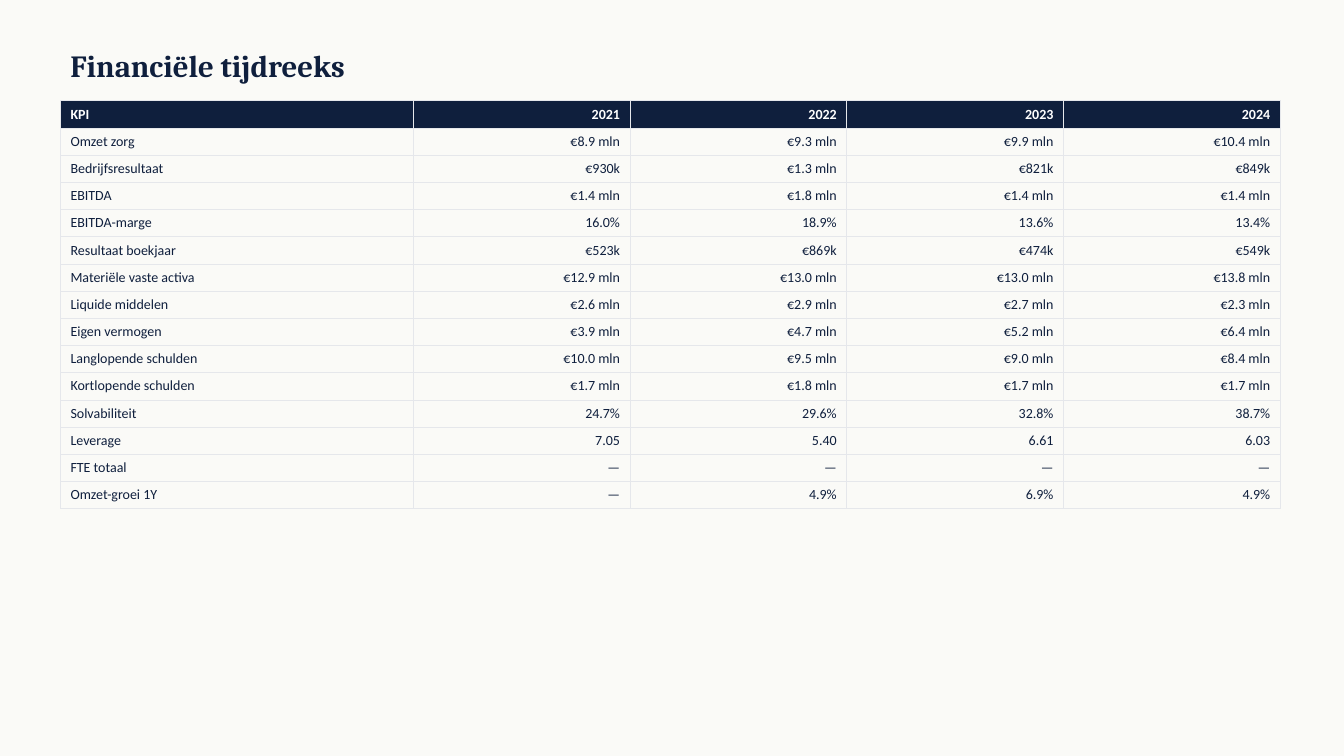
from dataclasses import dataclass

from lxml import etree
from pptx import Presentation
from pptx.dml.color import RGBColor
from pptx.enum.text import MSO_ANCHOR, PP_ALIGN
from pptx.oxml.ns import qn
from pptx.util import Inches, Pt

MIDDLE = MSO_ANCHOR.MIDDLE
LEFT, RIGHT = PP_ALIGN.LEFT, PP_ALIGN.RIGHT


@dataclass(frozen=True)
class Theme:
    paper: str = "FAFAF7"
    navy: str = "0F1F3D"
    white: str = "FFFFFF"
    border: str = "E5E7EB"
    border_width: float = 0.5
    title_font: str = "Cambria"
    title_size: int = 22
    table_font: str = "Calibri"
    table_size: int = 10


THEME = Theme()

GRID_STEP = 0.1
SLIDE_COLUMNS, SLIDE_ROWS = 133.33, 75
MARGIN = 6
TITLE_TOP, TITLE_WIDTH, TITLE_HEIGHT = 4, 120, 5
TABLE_TOP, LABEL_WIDTH, YEAR_WIDTH, ROW_HEIGHT = 10, 35, 21.5, 2.7

HEADER = ("KPI", "2021", "2022", "2023", "2024")
KPI_ROWS = (
    ("Omzet zorg", "€8.9 mln", "€9.3 mln", "€9.9 mln", "€10.4 mln"),
    ("Bedrijfsresultaat", "€930k", "€1.3 mln", "€821k", "€849k"),
    ("EBITDA", "€1.4 mln", "€1.8 mln", "€1.4 mln", "€1.4 mln"),
    ("EBITDA-marge", "16.0%", "18.9%", "13.6%", "13.4%"),
    ("Resultaat boekjaar", "€523k", "€869k", "€474k", "€549k"),
    ("Materiële vaste activa", "€12.9 mln", "€13.0 mln", "€13.0 mln", "€13.8 mln"),
    ("Liquide middelen", "€2.6 mln", "€2.9 mln", "€2.7 mln", "€2.3 mln"),
    ("Eigen vermogen", "€3.9 mln", "€4.7 mln", "€5.2 mln", "€6.4 mln"),
    ("Langlopende schulden", "€10.0 mln", "€9.5 mln", "€9.0 mln", "€8.4 mln"),
    ("Kortlopende schulden", "€1.7 mln", "€1.8 mln", "€1.7 mln", "€1.7 mln"),
    ("Solvabiliteit", "24.7%", "29.6%", "32.8%", "38.7%"),
    ("Leverage", "7.05", "5.40", "6.61", "6.03"),
    ("FTE totaal", "—", "—", "—", "—"),
    ("Omzet-groei 1Y", "—", "4.9%", "6.9%", "4.9%"),
)


def grid(steps):
    return Inches(steps * GRID_STEP)


def write_text(text_frame, text, font_name, size, color, bold, alignment=LEFT):
    text_frame.text = text
    paragraph = text_frame.paragraphs[0]
    paragraph.alignment = alignment
    font = paragraph.runs[0].font
    font.name, font.size, font.bold = font_name, Pt(size), bold
    font.color.rgb = RGBColor.from_string(color)


def add_title(slide, text):
    shape = slide.shapes.add_textbox(
        grid(MARGIN), grid(TITLE_TOP), grid(TITLE_WIDTH), grid(TITLE_HEIGHT)
    )
    text_frame = shape.text_frame
    text_frame.word_wrap = True
    text_frame.vertical_anchor = MIDDLE
    write_text(text_frame, text, THEME.title_font, THEME.title_size, THEME.navy, True)


def add_borders(cell):
    properties = cell._tc.get_or_add_tcPr()
    for side in ("a:lnL", "a:lnR", "a:lnT", "a:lnB"):
        line = etree.SubElement(properties, qn(side), w=str(Pt(THEME.border_width)))
        fill = etree.SubElement(line, qn("a:solidFill"))
        etree.SubElement(fill, qn("a:srgbClr"), val=THEME.border)


def format_cell(cell, text, is_header, alignment):
    color = THEME.white if is_header else THEME.navy
    write_text(
        cell.text_frame, text, THEME.table_font, THEME.table_size, color, is_header, alignment
    )
    add_borders(cell)
    if is_header:
        cell.fill.solid()
        cell.fill.fore_color.rgb = RGBColor.from_string(THEME.navy)
    else:
        cell.fill.background()


def add_kpi_table(slide, header, body):
    rows = (header, *body)
    widths = [LABEL_WIDTH] + [YEAR_WIDTH] * (len(header) - 1)
    table = slide.shapes.add_table(
        len(rows), len(widths), grid(MARGIN), grid(TABLE_TOP),
        grid(sum(widths)), grid(ROW_HEIGHT * len(rows)),
    ).table
    table.horz_banding = False
    for column, width in zip(table.columns, widths):
        column.width = grid(width)
    for row_index, texts in enumerate(rows):
        table.rows[row_index].height = grid(ROW_HEIGHT)
        for column_index, text in enumerate(texts):
            alignment = RIGHT if column_index else LEFT
            format_cell(table.cell(row_index, column_index), text, row_index == 0, alignment)


def main():
    presentation = Presentation()
    presentation.slide_width = grid(SLIDE_COLUMNS)
    presentation.slide_height = grid(SLIDE_ROWS)
    slide = presentation.slides.add_slide(presentation.slide_layouts[6])
    slide.background.fill.solid()
    slide.background.fill.fore_color.rgb = RGBColor.from_string(THEME.paper)
    add_title(slide, "Financiële tijdreeks")
    add_kpi_table(slide, HEADER, KPI_ROWS)
    presentation.save("out.pptx")


if __name__ == "__main__":
    main()
